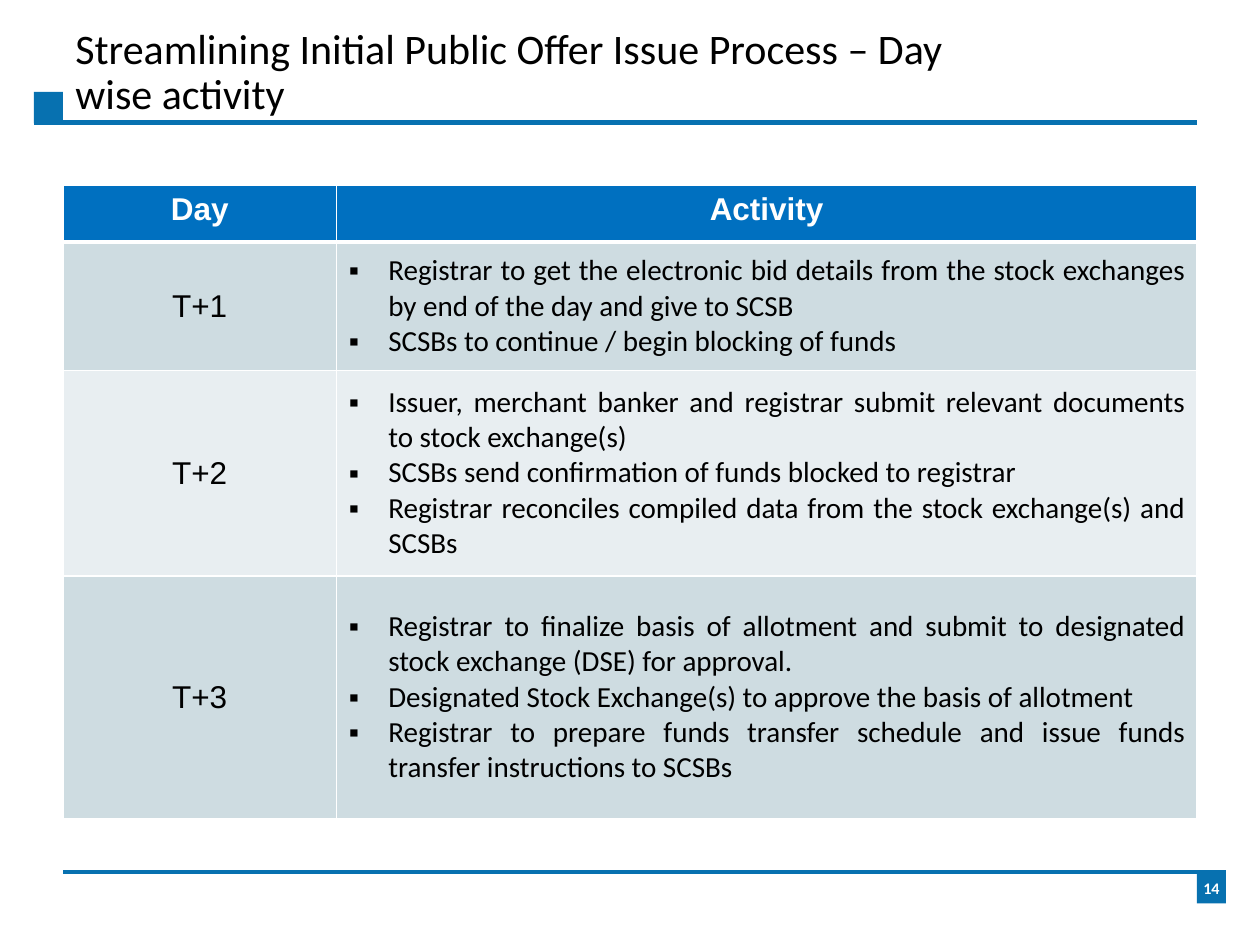
from lxml import etree
from pptx import Presentation
from pptx.dml.color import RGBColor
from pptx.enum.shapes import MSO_CONNECTOR, MSO_SHAPE
from pptx.enum.text import MSO_ANCHOR, PP_ALIGN
from pptx.oxml.ns import qn
from pptx.util import Pt

STRAIGHT = MSO_CONNECTOR.STRAIGHT
RECTANGLE = MSO_SHAPE.RECTANGLE
TOP, MIDDLE, BOTTOM = MSO_ANCHOR.TOP, MSO_ANCHOR.MIDDLE, MSO_ANCHOR.BOTTOM
LEFT, CENTER, JUSTIFY = PP_ALIGN.LEFT, PP_ALIGN.CENTER, PP_ALIGN.JUSTIFY

ACCENT, HEADER = "0771B0", "0070C0"
BANDS = ("CEDCE1", "E8EEF1")
WHITE, BLACK = "FFFFFF", "000000"

HEADINGS = ("Day", "Activity")
ACTIVITIES = [
    ("T+1", [
        "Registrar to get the electronic bid details from the stock exchanges "
        "by end of the day and give to SCSB",
        "SCSBs to continue / begin blocking of funds",
    ]),
    ("T+2", [
        "Issuer, merchant banker and registrar submit relevant documents "
        "to stock exchange(s)",
        "SCSBs send confirmation of funds blocked to registrar",
        "Registrar reconciles compiled data from the stock exchange(s) and SCSBs",
    ]),
    ("T+3", [
        "Registrar to finalize basis of allotment and submit to designated "
        "stock exchange (DSE) for approval.",
        "Designated Stock Exchange(s) to approve the basis of allotment",
        "Registrar to prepare funds transfer schedule and issue funds "
        "transfer instructions to SCSBs",
    ]),
]
COLUMN_WIDTHS = (156.24, 491.76)
ROW_HEIGHTS = (32.4, 73.44, 117.36, 138.96)


def color(value):
    return RGBColor.from_string(value)


def paint(item, value):
    item.fill.solid()
    item.fill.fore_color.rgb = color(value)


def write(para, text, name, size, ink, bold=False, align=LEFT):
    para.text = text
    para.alignment = align
    font = para.font
    font.name, font.size, font.bold = name, Pt(size), bold
    font.color.rgb = color(ink)


def add_bullet(para, indent):
    properties = para._p.get_or_add_pPr()
    properties.set("marL", str(Pt(indent)))
    properties.set("indent", str(-Pt(indent)))
    etree.SubElement(properties, qn("a:buFont"), typeface="Arial")
    etree.SubElement(properties, qn("a:buChar"), char="▪")


def add_borders(cell, bottom):
    properties = cell._tc.get_or_add_tcPr()
    widths = (("a:lnL", 1), ("a:lnR", 1), ("a:lnT", 1), ("a:lnB", bottom))
    for index, (tag, width) in enumerate(widths):
        border = etree.Element(qn(tag), w=str(Pt(width)))
        fill = etree.SubElement(border, qn("a:solidFill"))
        etree.SubElement(fill, qn("a:srgbClr"), val=WHITE)
        properties.insert(index, border)


def add_rule(page, left, right, y):
    rule = page.shapes.add_connector(STRAIGHT, Pt(left), Pt(y), Pt(right), Pt(y))
    rule.line.color.rgb = color(ACCENT)
    rule.line.width = Pt(2.5)
    etree.SubElement(rule._element.spPr, qn("a:effectLst"))


def add_square(page, left, top, width, height):
    square = page.shapes.add_shape(
        RECTANGLE, Pt(left), Pt(top), Pt(width), Pt(height))
    square.shadow.inherit = False
    paint(square, ACCENT)
    square.line.fill.background()
    return square


def add_title(page, left, top, width, height):
    box = page.shapes.add_textbox(Pt(left), Pt(top), Pt(width), Pt(height))
    frame = box.text_frame
    frame.word_wrap = True
    frame.vertical_anchor = BOTTOM
    para = frame.paragraphs[0]
    write(para, "Streamlining Initial Public Offer Issue Process – Day wise activity",
          "Calibri", 24, BLACK)
    para.line_spacing = 0.9


def add_header_bar(page, left, top, width, height):
    add_rule(page, left, left + width, top + height - 0.6)
    add_square(page, left, top, 16.56, height)


def add_footer(page, left, top, width, height):
    number_width = 16.56
    right = left + width - number_width
    add_rule(page, left, left + width, top)
    frame = add_square(page, right, top, number_width, height).text_frame
    frame.word_wrap = False
    frame.vertical_anchor = MIDDLE
    frame.margin_left = frame.margin_right = 0
    frame.margin_top = frame.margin_bottom = 0
    write(frame.paragraphs[0], "14", "Calibri", 9.2, WHITE, True, CENTER)


def style_cell(cell, fill, anchor, bottom=1):
    paint(cell, fill)
    add_borders(cell, bottom)
    cell.vertical_anchor = anchor


def add_schedule(page, left, top, width, height):
    table = page.shapes.add_table(
        len(ROW_HEIGHTS), len(COLUMN_WIDTHS),
        Pt(left), Pt(top), Pt(width), Pt(height)).table
    for column, column_width in zip(table.columns, COLUMN_WIDTHS):
        column.width = Pt(column_width)
    for row, row_height in zip(table.rows, ROW_HEIGHTS):
        row.height = Pt(row_height)
    for index, heading in enumerate(HEADINGS):
        cell = table.cell(0, index)
        style_cell(cell, HEADER, TOP, 3)
        write(cell.text_frame.paragraphs[0], heading, "Arial", 18, WHITE, True, CENTER)
    for index, (day, steps) in enumerate(ACTIVITIES):
        day_cell, step_cell = table.cell(index + 1, 0), table.cell(index + 1, 1)
        for cell in (day_cell, step_cell):
            style_cell(cell, BANDS[index % 2], MIDDLE)
        write(day_cell.text_frame.paragraphs[0], day, "Arial", 18, BLACK, align=CENTER)
        frame = step_cell.text_frame
        for number, step in enumerate(steps):
            para = frame.add_paragraph() if number else frame.paragraphs[0]
            add_bullet(para, 22.5)
            write(para, step, "Calibri", 16.6, BLACK, align=JUSTIFY)


def main():
    deck = Presentation()
    deck.slide_width, deck.slide_height = Pt(720), Pt(540)
    page = deck.slides.add_slide(deck.slide_layouts[6])
    add_header_bar(page, 19.44, 52.56, 664.56, 18)
    add_schedule(page, 36, 105.84, sum(COLUMN_WIDTHS), sum(ROW_HEIGHTS))
    add_title(page, 36, 11.52, 545.76, 59.76)
    add_footer(page, 36, 498.24, 664.56, 18)
    deck.save("out.pptx")


if __name__ == "__main__":
    main()
